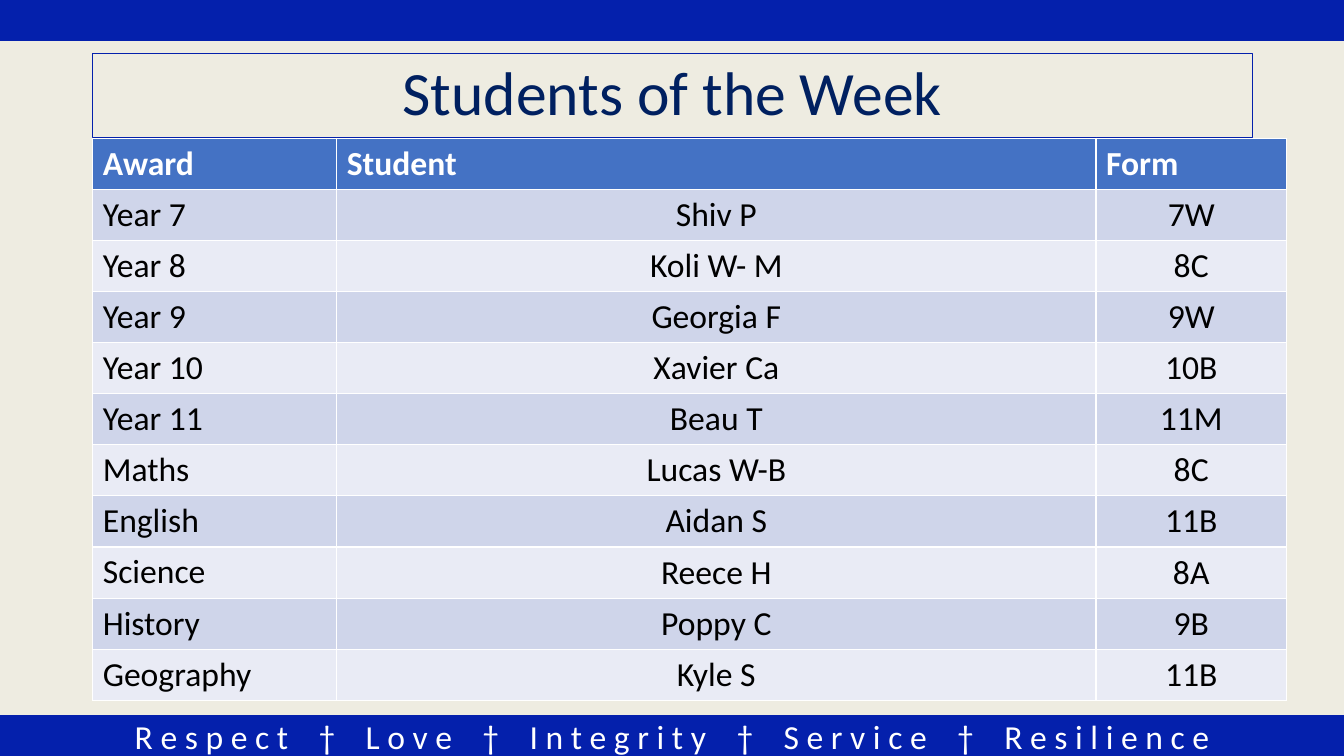
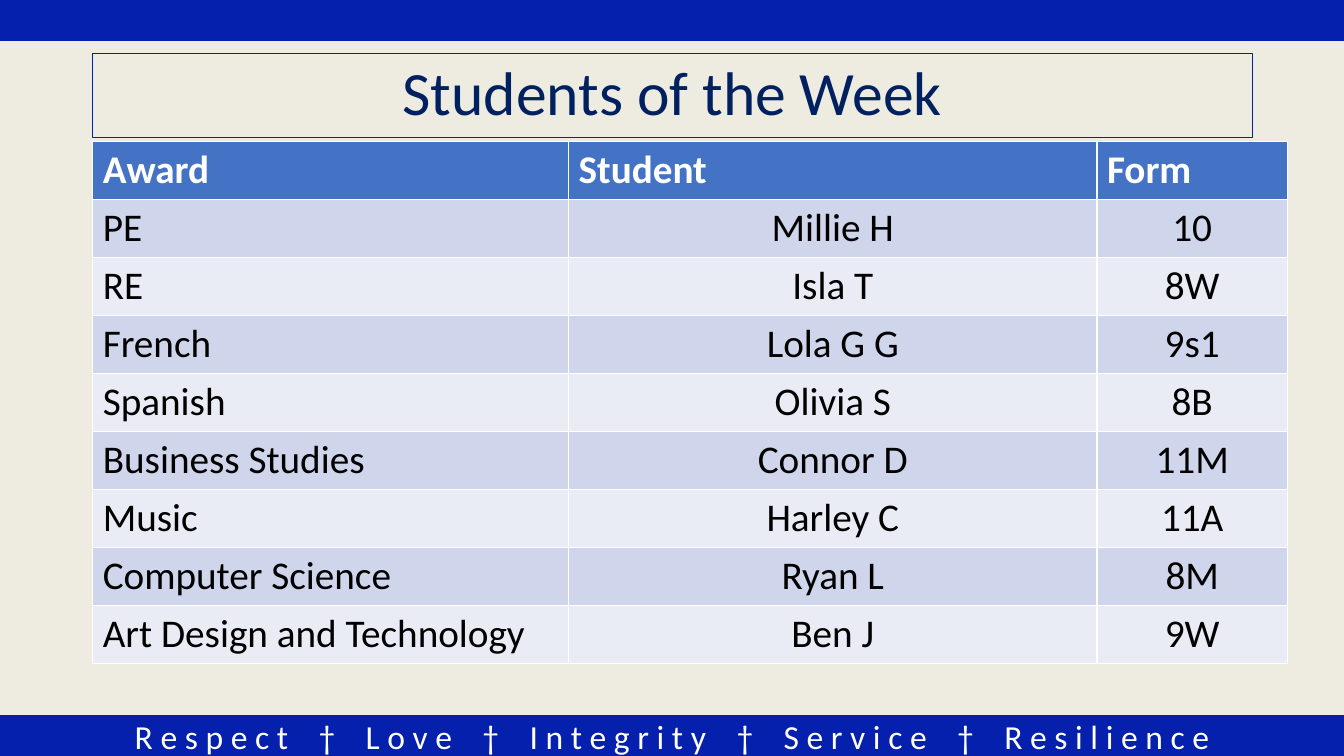
from dataclasses import dataclass

from pptx import Presentation
from pptx.dml.color import RGBColor as Rgb
from pptx.enum.shapes import MSO_SHAPE as Preset
from pptx.enum.text import MSO_ANCHOR as Anchor, MSO_AUTO_SIZE as AutoSize, PP_ALIGN as Align
from pptx.util import Inches, Pt


@dataclass(frozen=True)
class Theme:
    font: str = "Calibri"
    paper: Rgb = Rgb.from_string("EEECE1")
    band: Rgb = Rgb.from_string("0420AC")
    title: Rgb = Rgb.from_string("002060")
    header: Rgb = Rgb.from_string("4472C4")
    stripes: tuple = (Rgb.from_string("E9EBF5"), Rgb.from_string("CFD5EA"))
    white: Rgb = Rgb.from_string("FFFFFF")
    black: Rgb = Rgb.from_string("000000")
    title_size: int = 44
    footer_size: int = 24


THEME = Theme()
VALUES = ["Respect", "Love", "Integrity", "Service", "Resilience"]
VALUE_GAP = "1625"  # extra width of a space beside a dagger, in 1/100 pt
LEFT = 0.92
HEADINGS = ("Award", "Student", "Form")

# Each slide: table top, row height, type size, column widths, rows
AWARD_SLIDES = [
    (1.37, 0.5, 24, (2.42, 7.53, 1.89), [
        ("Year 7", "Shiv P", "7W"),
        ("Year 8", "Koli W- M", "8C"),
        ("Year 9", "Georgia F", "9W"),
        ("Year 10", "Xavier Ca", "10B"),
        ("Year 11", "Beau T", "11M"),
        ("Maths", "Lucas W-B", "8C"),
        ("English", "Aidan S", "11B"),
        ("Science", "Reece H", "8A"),
        ("History", "Poppy C", "9B"),
        ("Geography", "Kyle S", "11B"),
    ]),
    (1.4, 0.57, 28, (4.72, 5.24, 1.89), [
        ("PE", "Millie H", "10"),
        ("RE", "Isla T", "8W"),
        ("French", "Lola G G", "9s1"),
        ("Spanish", "Olivia S", "8B"),
        ("Business Studies", "Connor D", "11M"),
        ("Music", "Harley C", "11A"),
        ("Computer Science", "Ryan L", "8M"),
        ("Art Design and Technology", "Ben J", "9W"),
    ]),
]


def style_paragraph(para, size, color, align=Align.CENTER, bold=False):
    para.alignment = align
    para.font.name = THEME.font
    para.font.size = Pt(size)
    para.font.bold = bold
    para.font.color.rgb = color


deck = Presentation()
deck.slide_width, deck.slide_height = Inches(13.33), Inches(7.5)
layout = deck.slide_layouts.get_by_name("Title Only")
layout.background.fill.solid()
layout.background.fill.fore_color.rgb = THEME.paper
for placeholder in list(layout.placeholders)[1:]:
    placeholder.element.getparent().remove(placeholder.element)
pages = [deck.slides.add_slide(layout) for _ in AWARD_SLIDES]

# Bands are made on a slide, then moved to the layout that all slides share
bands = []
for top in (0, 7.1):
    band = pages[0].shapes.add_shape(
        Preset.RECTANGLE, 0, Inches(top), deck.slide_width, Inches(0.4))
    band.shadow.inherit = False
    band.fill.solid()
    band.fill.fore_color.rgb = THEME.band
    band.line.color.rgb = THEME.band
    band.line.width = Pt(1)
    bands.append(band)

footer = bands[1].text_frame
footer.margin_top = footer.margin_bottom = 0
footer.vertical_anchor = Anchor.MIDDLE
para = footer.paragraphs[0]
style_paragraph(para, THEME.footer_size, THEME.white)
for index, value in enumerate(VALUES):
    separator = [" ", "†", " "] if index else []
    for text in [*separator, " ".join(value)]:
        span = para.add_run()
        span.text = text
        if text == " ":
            span._r.get_or_add_rPr().set("spc", VALUE_GAP)
for band in bands:
    layout.shapes.element.append(band.element)

for page, (top, row_height, size, widths, awards) in zip(pages, AWARD_SLIDES):
    title = page.shapes.title
    title.left, title.top = Inches(LEFT), Inches(0.53)
    title.width, title.height = Inches(11.5), Inches(0.83)
    title.line.color.rgb = THEME.band
    title.line.width = Pt(0.75)
    title.text_frame.text = "Students of the Week"
    title.text_frame.auto_size = AutoSize.NONE
    title.text_frame.vertical_anchor = Anchor.MIDDLE
    para = title.text_frame.paragraphs[0]
    para.line_spacing = 0.9
    style_paragraph(para, THEME.title_size, THEME.title)

    rows = [HEADINGS, *awards]
    table = page.shapes.add_table(
        len(rows), len(HEADINGS), Inches(LEFT), Inches(top),
        Inches(sum(widths)), Inches(row_height * len(rows))).table
    for column, width in zip(table.columns, widths):
        column.width = Inches(width)
    for row_index, row in enumerate(rows):
        is_header = row_index == 0
        for column_index, text in enumerate(row):
            cell = table.cell(row_index, column_index)
            cell.text = text
            cell.fill.solid()
            cell.fill.fore_color.rgb = THEME.header if is_header else THEME.stripes[row_index % 2]
            centered = not is_header and column_index > 0
            if centered:
                cell.vertical_anchor = Anchor.BOTTOM
                cell.margin_left = cell.margin_right = cell.margin_top = Inches(0.01)
            style_paragraph(
                cell.text_frame.paragraphs[0], size,
                THEME.white if is_header else THEME.black,
                Align.CENTER if centered else Align.LEFT, is_header)

deck.save("out.pptx")
